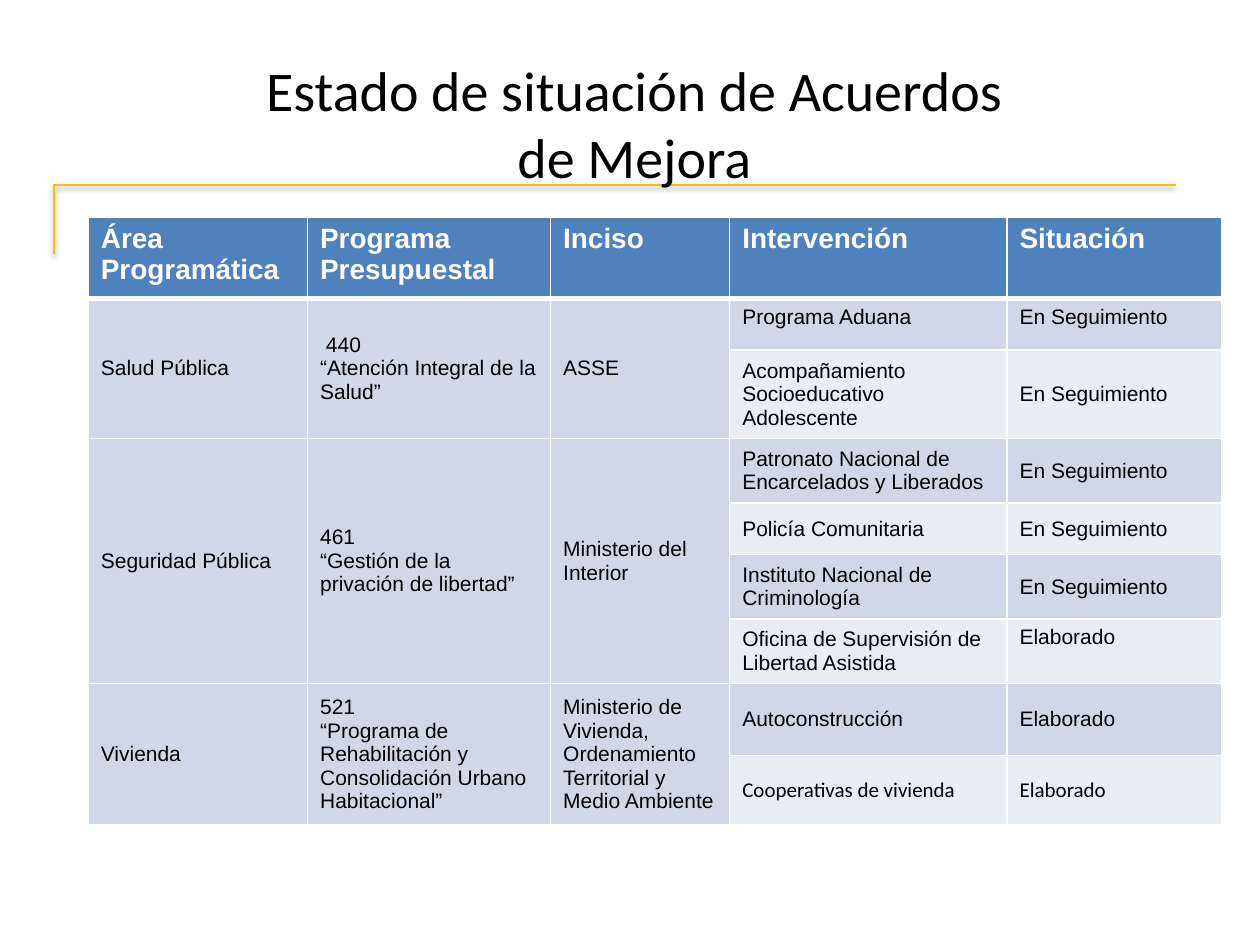
from lxml.etree import SubElement
from pptx import Presentation
from pptx.dml.color import RGBColor
from pptx.enum.text import MSO_ANCHOR, PP_ALIGN
from pptx.oxml.ns import qn
from pptx.util import Cm, Pt

HEADERS = ["Área\nProgramática", "Programa Presupuestal", "Inciso", "Intervención", "Situación"]
FOLLOWED, DONE = "En Seguimiento", "Elaborado"
AREAS = [
    ("Salud Pública", " 440\n“Atención Integral de la Salud”", "ASSE", [
        ("Programa Aduana", FOLLOWED),
        ("Acompañamiento Socioeducativo Adolescente", FOLLOWED),
    ]),
    ("Seguridad Pública", "461\n“Gestión de la privación de libertad”",
     "Ministerio del Interior", [
        ("Patronato Nacional de Encarcelados y Liberados", FOLLOWED),
        ("Policía Comunitaria", FOLLOWED),
        ("Instituto Nacional de Criminología", FOLLOWED),
        ("Oficina de Supervisión de Libertad Asistida", DONE),
    ]),
    ("Vivienda",
     "521\n“Programa de Rehabilitación y Consolidación Urbano Habitacional”",
     "Ministerio de Vivienda, Ordenamiento Territorial y Medio Ambiente", [
        ("Autoconstrucción", DONE),
        ("Cooperativas de vivienda", DONE),
    ]),
]
COLUMN_WIDTHS = [4.42, 4.9, 3.61, 5.59, 4.32]
ROW_HEIGHTS = [1.65, 1.04, 1.3, 1.3, 1.04, 1.3, 1.3, 1.45, 1.4]
TOP_ANCHORED = {(1, 3), (1, 4), (6, 4)}
CALIBRI_CELLS = {(8, 3), (8, 4)}
HEADER_FILL, BAND_FILLS = "4F81BD", ("E9EDF4", "D0D8E8")


def color(value):
    return RGBColor.from_string(value)


def format_text(text_frame, font_name, size, text_color, bold=False, align=None):
    for paragraph in text_frame.paragraphs:
        paragraph.alignment = align
        for run in paragraph.runs:
            run.font.name = font_name
            run.font.size = Pt(size)
            run.font.bold = bold
            run.font.color.rgb = color(text_color)


def add_title(slide, left, top, width, height):
    box = slide.shapes.add_textbox(Cm(left), Cm(top), Cm(width), Cm(height))
    text_frame = box.text_frame
    text_frame.word_wrap = True
    text_frame.vertical_anchor = MSO_ANCHOR.TOP
    text_frame.text = "Estado de situación de Acuerdos de Mejora"
    format_text(text_frame, "Calibri", 32, "000000", align=PP_ALIGN.CENTER)


def add_corner_line(slide, left, top, width, height):
    builder = slide.shapes.build_freeform(Cm(left), Cm(top + height))
    builder.add_line_segments(
        [(Cm(left), Cm(top)), (Cm(left + width), Cm(top))], close=False)
    shape = builder.convert_to_shape()
    shape.fill.background()
    shape.line.color.rgb = color("FFC000")
    shape.line.width = Pt(1)
    shape.shadow.inherit = False
    effects = shape._element.spPr.find(qn("a:effectLst"))
    shadow = SubElement(effects, qn("a:outerShdw"), blurRad=str(Pt(3.1)),
                        dist=str(Pt(1.6)), dir="5400000", rotWithShape="0")
    shadow_color = SubElement(shadow, qn("a:srgbClr"), val="000000")
    SubElement(shadow_color, qn("a:alpha"), val="38000")


def set_borders(cell, bottom_width):
    properties = cell._tc.get_or_add_tcPr()
    for side, width in (("L", 1), ("R", 1), ("T", 1), ("B", bottom_width)):
        line = SubElement(properties, qn(f"a:ln{side}"), w=str(Pt(width)))
        fill = SubElement(line, qn("a:solidFill"))
        SubElement(fill, qn("a:srgbClr"), val="FFFFFF")


def fill_cell_texts(table):
    """Write the wording and merge the cells that each area shares."""
    for column, header in enumerate(HEADERS):
        table.cell(0, column).text = header
    row = 1
    for *shared, interventions in AREAS:
        last_row = row + len(interventions) - 1
        for column, text in enumerate(shared):
            table.cell(row, column).text = text
            table.cell(row, column).merge(table.cell(last_row, column))
        for name, status in interventions:
            table.cell(row, 3).text = name
            table.cell(row, 4).text = status
            row += 1


def format_cell(cell, row, column):
    is_header = row == 0
    set_borders(cell, 3 if is_header else 1)
    cell.fill.solid()
    if is_header:
        cell.fill.fore_color.rgb = color(HEADER_FILL)
        format_text(cell.text_frame, "Arial", 16, "FFFFFF", bold=True)
        return
    band = 1 if column < 3 else row % 2
    if column >= 3 and row >= 3:
        band = row % 2
    cell.fill.fore_color.rgb = color(BAND_FILLS[band])
    anchored_top = (row, column) in TOP_ANCHORED
    cell.vertical_anchor = MSO_ANCHOR.TOP if anchored_top else MSO_ANCHOR.MIDDLE
    font_name = "Calibri" if (row, column) in CALIBRI_CELLS else "Arial"
    format_text(cell.text_frame, font_name, 12, "000000")


def add_agreements_table(slide, left, top):
    table = slide.shapes.add_table(
        len(ROW_HEIGHTS), len(COLUMN_WIDTHS), Cm(left), Cm(top),
        Cm(sum(COLUMN_WIDTHS)), Cm(sum(ROW_HEIGHTS))).table
    for column, width in zip(table.columns, COLUMN_WIDTHS):
        column.width = Cm(width)
    for row, height in zip(table.rows, ROW_HEIGHTS):
        row.height = Cm(height)
    fill_cell_texts(table)
    for row in range(len(ROW_HEIGHTS)):
        for column in range(len(COLUMN_WIDTHS)):
            format_cell(table.cell(row, column), row, column)


def main():
    presentation = Presentation()
    presentation.slide_width, presentation.slide_height = Cm(25.4), Cm(19.05)
    slide = presentation.slides.add_slide(presentation.slide_layouts[6])
    add_corner_line(slide, 1.09, 3.73, 22.61, 1.4)
    add_title(slide, 4.75, 0.99, 16.08, 1.7)
    add_agreements_table(slide, 1.78, 4.37)
    presentation.save("out.pptx")


if __name__ == "__main__":
    main()
